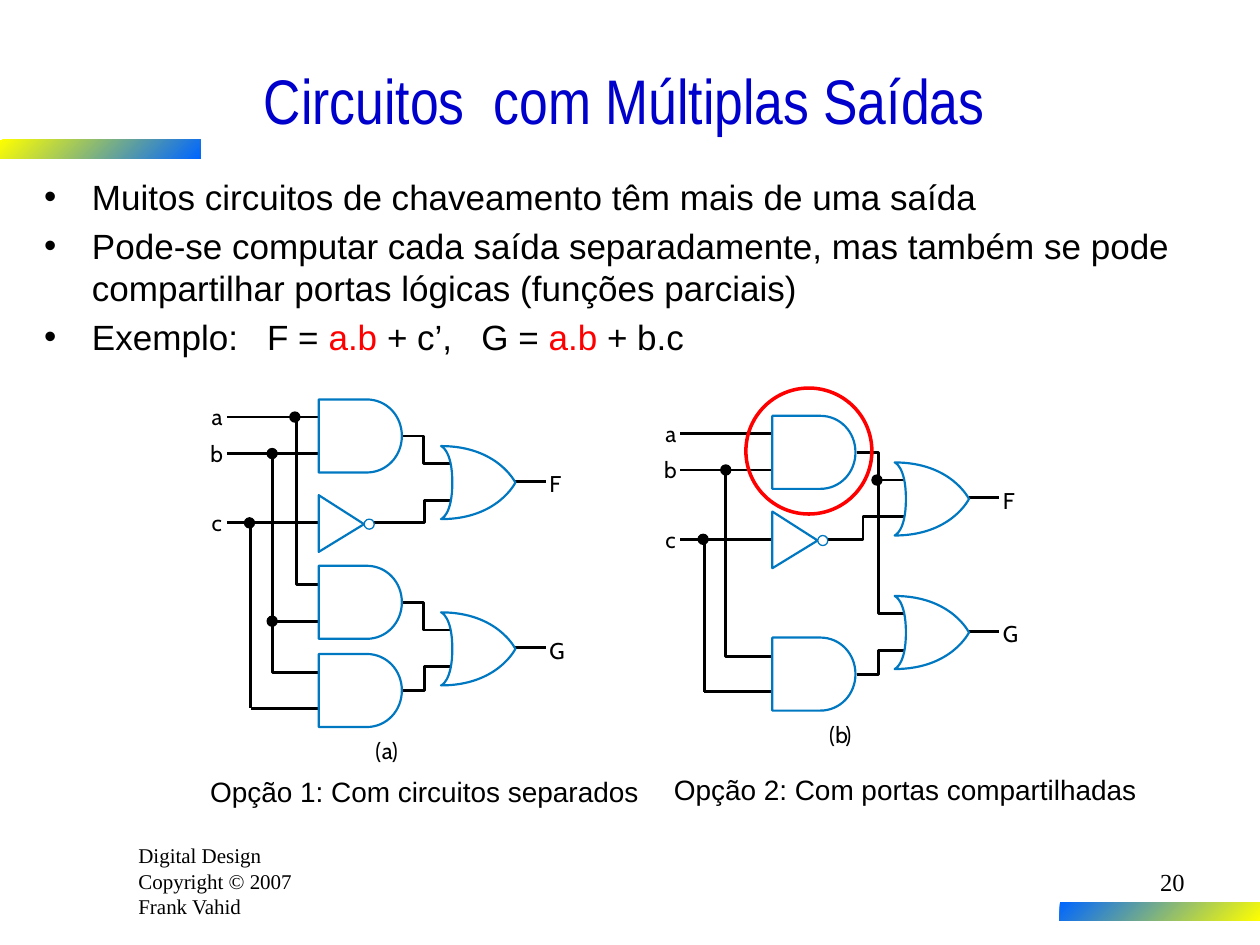
from dataclasses import dataclass

from lxml import etree
from pptx import Presentation
from pptx.dml.color import RGBColor as Color
from pptx.enum.shapes import MSO_CONNECTOR as Connector, MSO_SHAPE as Shape
from pptx.enum.text import MSO_ANCHOR as Anchor, MSO_AUTO_SIZE as AutoSize, PP_ALIGN as Align
from pptx.oxml.ns import qn
from pptx.util import Inches, Pt


@dataclass(frozen=True)
class Theme:
    black: Color = Color(0, 0, 0)
    white: Color = Color(255, 255, 255)
    red: Color = Color(255, 0, 0)
    title: Color = Color(0, 0, 0xCC)
    gate: Color = Color(0, 0x78, 0xC1)
    yellow: Color = Color(255, 255, 0)
    blue: Color = Color(0, 0x66, 255)
    title_font: tuple = ("Arial Narrow", 36)
    body_font: tuple = ("Arial", 20)
    option_font: tuple = ("Arial", 16)
    label_font: tuple = ("Cabin", 13)
    footer_font: tuple = ("Times New Roman", 12)
    number_font: tuple = ("Times New Roman", 14)
    wire: float = 1.63
    outline: float = 1.25
    thin: float = 0.75
    mark: float = 2


THEME = Theme()

# Gate geometry, measured from the top left corner of a circuit
GATE_X, OR_X, OUT_X, OR_PORT_X = 0.73, 1.7, 2.29, 1.78
AND_WIDTH, GATE_HEIGHT, OR_WIDTH = 0.66, 0.58, 0.59
PORTS = (0.14, 0.43)
INPUTS = {"a": 0.14, "b": 0.43, "c": 0.98}


def place(shape, left, top, width, height):
    shape.left, shape.top, shape.width, shape.height = map(Inches, (left, top, width, height))


def style(para, font, color, align=Align.LEFT):
    para.alignment = align
    para.font.name, para.font.size = font[0], Pt(font[1])
    para.font.color.rgb = color


def paint(shape, fill, line, width):
    shape.shadow.inherit = False
    if fill is None:
        shape.fill.background()
    else:
        shape.fill.solid()
        shape.fill.fore_color.rgb = fill
    shape.line.color.rgb = line
    shape.line.width = Pt(width)


def add_text(shapes, box, lines, font, align=Align.LEFT, margin=True, wrap=True):
    frame = shapes.add_textbox(*map(Inches, box)).text_frame
    frame.word_wrap = wrap
    if not margin:
        frame.margin_left = frame.margin_right = frame.margin_top = frame.margin_bottom = 0
    frame.text = "\n".join(lines)
    for para in frame.paragraphs:
        style(para, font, THEME.black, align)


def add_oval(shapes, box, fill, line, width):
    paint(shapes.add_shape(Shape.OVAL, *map(Inches, box)), fill, line, width)


def add_outline(shapes, points, fill, line, width, close=True):
    spots = [(Inches(x), Inches(y)) for x, y in points]
    builder = shapes.build_freeform(*spots[0], scale=1.0)
    builder.add_line_segments(spots[1:], close=close)
    shape = builder.convert_to_shape()
    paint(shape, fill, line, width)
    return shape


def add_gate(shapes, points, segments):
    """Closed outline; segments holds L for a line and C for a curve of three points."""
    shape = add_outline(shapes, points, THEME.white, THEME.gate, THEME.outline)
    steps = iter(list(shape._element.iter(qn("a:lnTo"))))
    for kind in segments:
        step = next(steps)
        if kind == "C":
            step.tag = qn("a:cubicBezTo")
            for _ in range(2):
                extra = next(steps)
                step.append(extra[0])
                extra.getparent().remove(extra)


def add_wire(shapes, points):
    if len(points) > 2:
        add_outline(shapes, points, None, THEME.black, THEME.wire, close=False)
        return
    (x1, y1), (x2, y2) = points
    wire = shapes.add_connector(Connector.STRAIGHT, *map(Inches, (x1, y1, x2, y2)))
    wire.line.color.rgb = THEME.black
    wire.line.width = Pt(THEME.wire)
    etree.SubElement(wire._element.spPr, qn("a:effectLst"))


def add_and(shapes, left, top):
    right, flat, bend = left + AND_WIDTH, left + 0.38, left + 0.54
    middle, bottom = top + 0.29, top + GATE_HEIGHT
    add_gate(shapes, [(left, bottom), (flat, bottom),
                      (bend, bottom), (right, middle + 0.16), (right, middle),
                      (right, middle - 0.16), (bend, top), (flat, top),
                      (left, top)], "LCCL")


def add_or(shapes, left, top):
    middle, bottom = top + 0.29, top + GATE_HEIGHT
    tip, inner, bend = (left + OR_WIDTH, middle), (left + 0.09, middle), left + 0.45
    add_gate(shapes, [tip, tip, (bend, bottom), (left, bottom),
                      (left, bottom), (inner[0], bottom - 0.03), inner,
                      (inner[0], top + 0.03), (left, top), (left, top),
                      (bend, top), tip, tip], "CCCC")


def add_not(shapes, left, top):
    add_gate(shapes, [(left, top + 0.45), (left + 0.36, top + 0.23), (left, top)], "LL")
    add_oval(shapes, (left + 0.36, top + 0.19, 0.08, 0.08), THEME.white, THEME.gate, THEME.thin)


def elbow(x1, y1, turn, y2, x2=OR_PORT_X):
    return [(x1, y1), (turn, y1), (turn, y2), (x2, y2)]


def add_circuit(page, left, top, name, ands, ors, wires, dots, caption_top):
    shapes = page.shapes.add_group_shape().shapes

    def label(text, x, y, width):
        add_text(shapes, (left + x, top + y, width, 0.22), [text], THEME.label_font,
                 margin=False, wrap=False)

    # Wires and junctions
    wires = ([[(0, y), (GATE_X, y)] for y in INPUTS.values()] + wires
             + [[(OUT_X, y + 0.28), (2.53, y + 0.28)] for y in ors])
    for wire in wires:
        add_wire(shapes, [(left + x, top + y) for x, y in wire])
    for x, y in dots:
        add_oval(shapes, (left + x - 0.04, top + y - 0.04, 0.08, 0.08),
                 THEME.black, THEME.black, THEME.thin)
    # Gates
    for y in ands:
        add_and(shapes, left + GATE_X, top + y)
    for y in ors:
        add_or(shapes, left + OR_X, top + y)
    add_not(shapes, left + GATE_X, top + 0.76)
    # Labels
    for text, y in INPUTS.items():
        label(text, -0.13 if text == "b" else -0.12, y - 0.11, 0.09)
    for text, y in zip("FG", ors):
        label(text, 2.56, y + 0.19, 0.13)
    for text, x, width in (("(", 1.18, 0.06), (name, 1.23, 0.08), (")", 1.31, 0.06)):
        label(text, x, caption_top, width)


def add_separate_circuit(page, left, top):
    ands, ors = (0, 1.32, 2.02), (0.37, 1.69)
    upper, lower = PORTS
    wires = [
        [(0.55, INPUTS["a"]), (0.55, 1.47), (GATE_X, 1.47)],
        [(0.36, INPUTS["b"]), (0.36, 2.17), (GATE_X, 2.17)],
        [(0.36, 1.76), (GATE_X, 1.76)],
        [(0.19, INPUTS["c"]), (0.19, 2.45)],
        [(0.19, 2.45), (GATE_X, 2.45)],
        *[elbow(1.4, gate + 0.29, 1.56, out + upper) for gate, out in zip(ands, ors)],
        elbow(1.11, INPUTS["c"], 1.57, ors[0] + lower),
        elbow(1.4, ands[2] + 0.29, 1.57, ors[1] + lower),
    ]
    dots = [(0.54, 0.14), (0.36, 0.43), (0.18, 0.98), (0.36, 1.76)]
    add_circuit(page, left, top, "a", ands, ors, wires, dots, 2.68)


def add_shared_circuit(page, left, top):
    ands, ors = (0, 1.76), (0.37, 1.43)
    upper, lower = PORTS
    wires = [
        [(0.36, INPUTS["b"]), (0.36, 1.91), (GATE_X, 1.91)],
        [(0.19, INPUTS["c"]), (0.19, 2.19)],
        [(0.19, 2.19), (GATE_X, 2.19)],
        [(1.57, ors[0] + upper), (OR_PORT_X, ors[0] + upper)],
        elbow(1.4, 0.29, 1.57, ors[1] + upper),
        elbow(1.12, INPUTS["c"], 1.45, ors[0] + lower),
        elbow(1.4, ands[1] + 0.29, 1.57, ors[1] + lower),
    ]
    dots = [(0.36, 0.43), (1.56, 0.51), (0.18, 0.98)]
    add_circuit(page, left, top, "b", ands, ors, wires, dots, 2.42)
    # Ring around the shared gate
    add_oval(page.shapes, (left + 0.52, top - 0.22, 1, 1), None, THEME.red, THEME.mark)


def add_bar(page, left, top, colors):
    bar = page.shapes.add_shape(Shape.RECTANGLE, *map(Inches, (left, top, 1.59, 0.15)))
    bar.shadow.inherit = False
    bar.line.fill.background()
    bar.fill.gradient()
    bar.fill.gradient_angle = 315
    for stop, color in zip(bar.fill.gradient_stops, colors):
        stop.color.rgb = color


def add_frame(page):
    add_text(page.shapes, (1, 6.64, 1.67, 0.71),
             ["Digital Design", "Copyright © 2007", "Frank Vahid"], THEME.footer_font)
    add_bar(page, 0, 1.11, (THEME.yellow, THEME.blue))
    add_bar(page, 8.41, 7.16, (THEME.blue, THEME.yellow))
    add_text(page.shapes, (7.42, 6.83, 2.08, 0.5), ["20"], THEME.number_font, Align.RIGHT)


def fill_title(title):
    place(title, 0.25, 0.33, 9.41, 0.92)
    frame = title.text_frame
    frame.text = "Circuitos  com Múltiplas Saídas"
    frame.vertical_anchor, frame.auto_size = Anchor.MIDDLE, AutoSize.NONE
    style(frame.paragraphs[0], THEME.title_font, THEME.title, Align.CENTER)


def fill_body(body):
    place(body, 0.25, 1.34, 9.42, 5.33)
    frame = body.text_frame
    frame.auto_size = AutoSize.NONE
    items = [
        ["Muitos circuitos de chaveamento têm mais de uma saída"],
        ["Pode-se computar cada saída separadamente, mas também se pode "
         "compartilhar portas lógicas (funções parciais)"],
        ["Exemplo:\tF = ", "a.b", " + c’,\tG = ", "a.b", " + b.c"],
    ]
    for index, item in enumerate(items):
        para = frame.paragraphs[0] if index == 0 else frame.add_paragraph()
        para.space_before = Pt(4 if index else 0)
        props = para._p.get_or_add_pPr()
        props.set("marL", str(Inches(0.38)))
        props.set("indent", str(-Inches(0.38)))
        etree.SubElement(props, qn("a:buChar"), char="•")
        if len(item) > 1:
            tabs = etree.SubElement(props, qn("a:tabLst"))
            for stop in (1.77, 3.47):
                etree.SubElement(tabs, qn("a:tab"), pos=str(Inches(stop)), algn="l")
        style(para, THEME.body_font, THEME.black)
        for text in item:
            span = para.add_run()
            span.text = text
            if text == "a.b":
                span.font.color.rgb = THEME.red


def main():
    deck = Presentation()
    deck.slide_width, deck.slide_height = Inches(10), Inches(7.5)
    page = deck.slides.add_slide(deck.slide_layouts[1])
    add_frame(page)
    fill_title(page.shapes.title)
    fill_body(page.placeholders[1])
    add_separate_circuit(page, 1.8, 3.17)
    add_shared_circuit(page, 5.4, 3.3)
    for left, top, width, text in ((1.57, 6.1, 3.65, "Opção 1: Com circuitos separados"),
                                   (5.25, 6.08, 3.92, "Opção 2: Com portas compartilhadas")):
        add_text(page.shapes, (left, top, width, 0.37), [text], THEME.option_font, wrap=False)
    deck.save("out.pptx")


if __name__ == "__main__":
    main()
